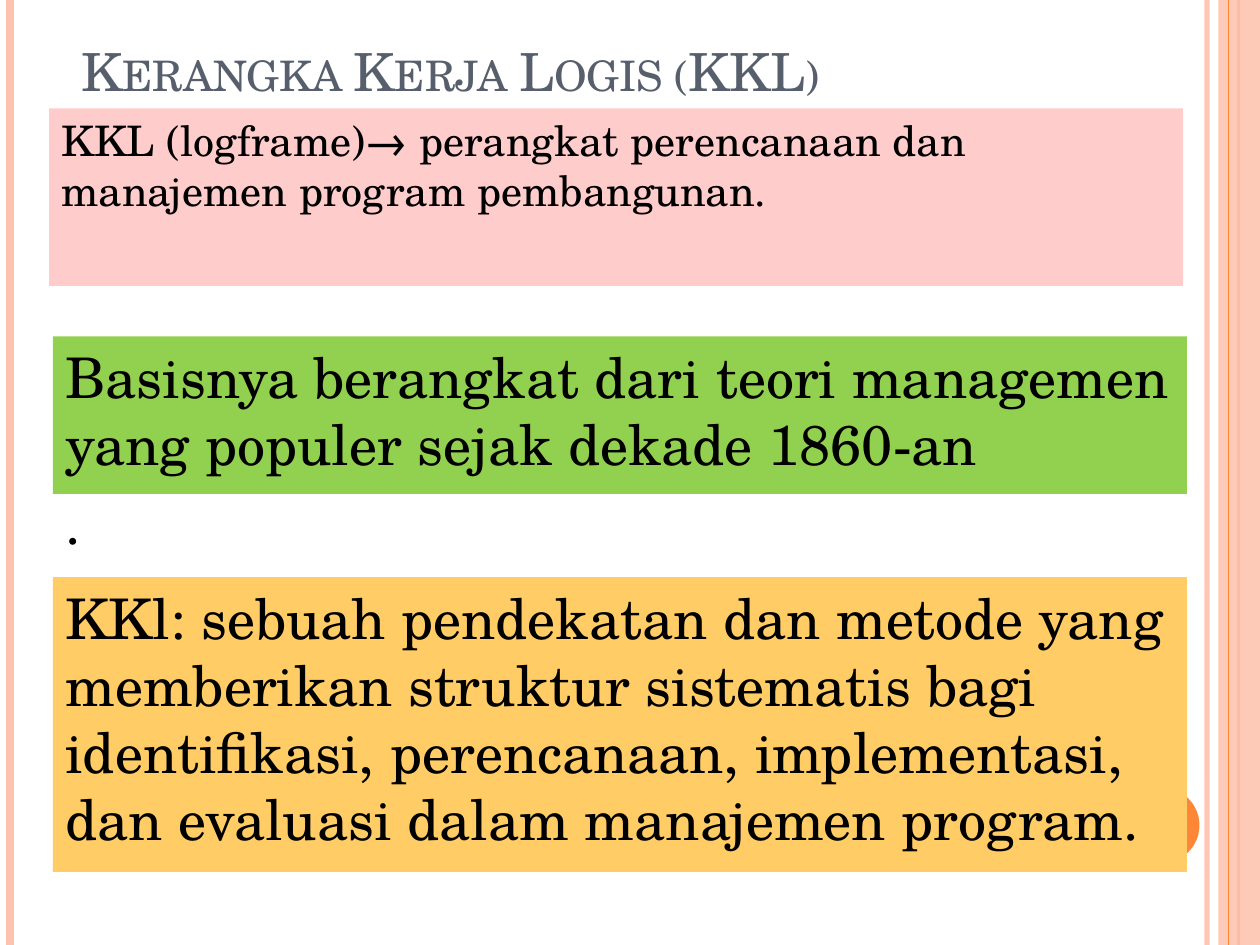
"""Builds the slide about the logical framework (Kerangka Kerja Logis)."""
from lxml import etree
from pptx import Presentation
from pptx import util as u
from pptx.dml.color import RGBColor
from pptx.enum import shapes, text
from pptx.oxml.ns import qn

PX = 9144
WIDTH, HEIGHT = 1000, 750
FONT = "TeX Gyre Schola"
PEACH = RGBColor(0xFE, 0xC3, 0xAE)
ORANGE = RGBColor(0xFE, 0x86, 0x37)
SLATE = RGBColor(0x57, 0x5F, 0x6D)
BLACK = RGBColor(0x00, 0x00, 0x00)
PINK = RGBColor(0xFF, 0xCC, 0xCC)
GREEN = RGBColor(0x92, 0xD0, 0x50)
AMBER = RGBColor(0xFF, 0xCC, 0x66)


def px(*lengths):
    return [u.Emu(length * PX) for length in lengths]


def set_alpha(properties, percent):
    for color in properties.iter(qn("a:srgbClr")):
        etree.SubElement(color, qn("a:alpha")).set("val", str(percent * 1000))


class SlideBuilder:
    """Holds the text style and the current slide."""

    def __init__(self, slide, font):
        self.slide = slide
        self.font = font

    def stripe(self, x, color, weight, alpha=100):
        line = self.slide.shapes.add_connector(
            shapes.MSO_CONNECTOR.STRAIGHT, *px(x, 0, x, HEIGHT))
        line.line.color.rgb = color
        line.line.width = u.Pt(weight)
        properties = line._element.spPr
        if alpha < 100:
            set_alpha(properties, alpha)
        etree.SubElement(properties, qn("a:effectLst"))

    def block(self, kind, box, color, alpha=100):
        block = self.slide.shapes.add_shape(kind, *px(*box))
        block.shadow.inherit = False
        block.fill.solid()
        block.fill.fore_color.rgb = color
        block.line.fill.background()
        if alpha < 100:
            set_alpha(block._element.spPr, alpha)
        return block

    def fill_text(self, frame, lines, size, color):
        frame.word_wrap = True
        for index, line in enumerate(lines):
            paragraph = frame.add_paragraph() if index else frame.paragraphs[0]
            paragraph.text = line
            paragraph.alignment = text.PP_ALIGN.LEFT
            if index:
                paragraph.space_before = u.Pt(size * 0.2)
            paragraph.font.name = self.font
            paragraph.font.size = u.Pt(size)
            paragraph.font.color.rgb = color

    def title(self, box, wording, size):
        frame = self.slide.shapes.add_textbox(*px(*box)).text_frame
        frame.vertical_anchor = text.MSO_ANCHOR.BOTTOM
        self.fill_text(frame, [wording], size, SLATE)
        run = frame.paragraphs[0].runs[0]
        run._r.get_or_add_rPr().set("cap", "small")

    def panel(self, box, color, lines, size):
        frame = self.block(shapes.MSO_SHAPE.RECTANGLE, box, color).text_frame
        frame.vertical_anchor = text.MSO_ANCHOR.TOP
        self.fill_text(frame, lines, size, BLACK)


def main():
    deck = Presentation()
    deck.slide_width, deck.slide_height = px(WIDTH, HEIGHT)
    builder = SlideBuilder(deck.slides.add_slide(deck.slide_layouts[6]), FONT)

    builder.stripe(958, PEACH, 3, 93)
    builder.stripe(8, PEACH, 4.5)
    builder.stripe(983, ORANGE, 1.5)
    builder.block(shapes.MSO_SHAPE.RECTANGLE, (967, 0, 33, HEIGHT), PEACH, 87)
    builder.stripe(975, ORANGE, 0.75)
    builder.block(shapes.MSO_SHAPE.OVAL, (892, 625, 60, 60), ORANGE)

    builder.title((55, 0, 900, 86), "Kerangka Kerja Logis (KKL)", 30)
    builder.panel((39, 86, 900, 141), PINK, [
        "KKL (logframe)→ perangkat perencanaan dan manajemen program "
        "pembangunan."], 24)
    builder.panel((42, 267, 900, 125), GREEN, [
        "Basisnya berangkat dari teori managemen yang populer sejak dekade "
        "1860-an", "."], 32)
    builder.panel((42, 458, 900, 234), AMBER, [
        "KKl: sebuah pendekatan dan metode yang memberikan struktur "
        "sistematis bagi identifikasi, perencanaan, implementasi, dan "
        "evaluasi dalam manajemen program."], 32)
    deck.save("out.pptx")


if __name__ == "__main__":
    main()
